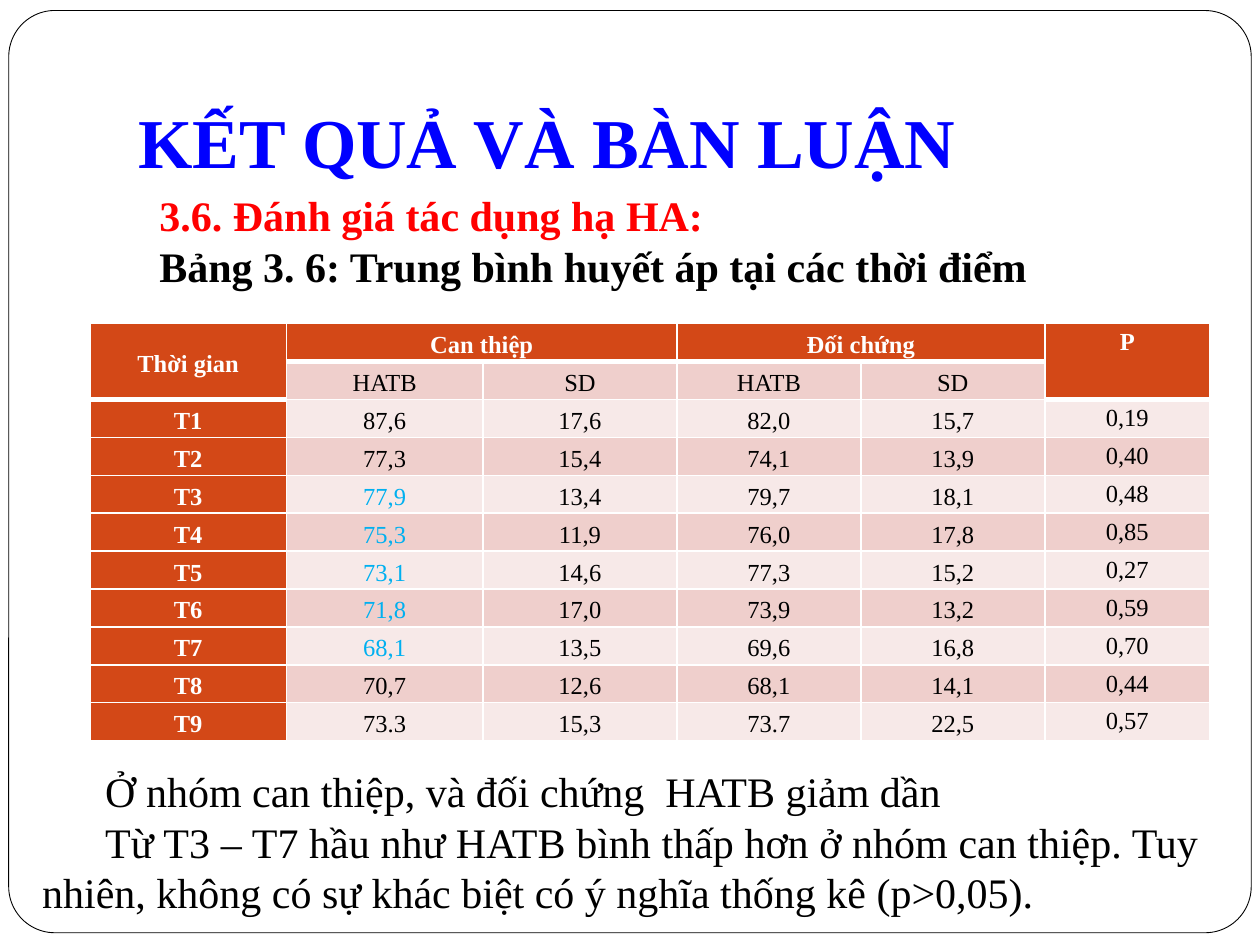
from dataclasses import dataclass

from lxml import etree
from pptx import Presentation
from pptx.dml.color import RGBColor
from pptx.enum.shapes import MSO_SHAPE
from pptx.enum.text import MSO_ANCHOR, MSO_AUTO_SIZE, PP_ALIGN
from pptx.oxml.ns import qn
from pptx.util import Pt

ROUND = MSO_SHAPE.ROUNDED_RECTANGLE
TOP, MIDDLE, BOTTOM = MSO_ANCHOR.TOP, MSO_ANCHOR.MIDDLE, MSO_ANCHOR.BOTTOM
LEFT, CENTER, JUSTIFY = PP_ALIGN.LEFT, PP_ALIGN.CENTER, PP_ALIGN.JUSTIFY
GROW, FIXED = MSO_AUTO_SIZE.SHAPE_TO_FIT_TEXT, MSO_AUTO_SIZE.NONE

FACE = "Times New Roman"
COLORS = {
    "white": "FFFFFF", "black": "000000", "blue": "0000FF", "red": "FF0000",
    "sky": "00B0F0", "head": "D34817", "dark": "EFCFCC", "light": "F7E9E8",
}
WIDTHS = (112.3, 112.3, 110.9, 105.1, 105.1, 94.3)
HEIGHT = 21.67
ENDS = (0, 5)
ROWS = (
    ("Thời gian", "Can thiệp", "", "Đối chứng", "", "P"),
    ("", "HATB", "SD", "HATB", "SD", ""),
    ("T1", "87,6", "17,6", "82,0", "15,7", "0,19"),
    ("T2", "77,3", "15,4", "74,1", "13,9", "0,40"),
    ("T3", "77,9", "13,4", "79,7", "18,1", "0,48"),
    ("T4", "75,3", "11,9", "76,0", "17,8", "0,85"),
    ("T5", "73,1", "14,6", "77,3", "15,2", "0,27"),
    ("T6", "71,8", "17,0", "73,9", "13,2", "0,59"),
    ("T7", "68,1", "13,5", "69,6", "16,8", "0,70"),
    ("T8", "70,7", "12,6", "68,1", "14,1", "0,44"),
    ("T9", "73.3", "15,3", "73.7", "22,5", "0,57"),
)
MERGES = ((0, 0, 1, 0), (0, 1, 0, 2), (0, 3, 0, 4), (0, 5, 1, 5))
LOWER = ("T3", "T4", "T5", "T6", "T7")


@dataclass
class Line:
    text: str
    size: float
    color: str = "black"
    bold: bool = False
    align: PP_ALIGN = JUSTIFY
    margin: float = 0
    indent: float = 0


@dataclass
class Block:
    box: tuple
    inset: tuple
    anchor: MSO_ANCHOR
    fit: MSO_AUTO_SIZE
    lines: tuple


BLOCKS = (
    Block((72, 21.6, 612, 90), (7.2, 3.6, 7.2, 7.2), BOTTOM, FIXED, (
        Line("KẾT QUẢ VÀ BÀN LUẬN", 40, "blue", True, LEFT),)),
    Block((48, 103, 612, 63.4), (7.2, 5, 7.2, 0), MIDDLE, GROW, (
        Line("3.6. Đánh giá tác dụng hạ HA:", 24, "red", True, margin=36),
        Line("Bảng 3. 6: Trung bình huyết áp tại các thời điểm", 24,
             bold=True, indent=36))),
    Block((17, 434, 675, 94.5), (7.2, 3.6, 7.2, 3.6), TOP, GROW, (
        Line("Ở nhóm can thiệp, và đối chứng  HATB giảm dần", 24, indent=36),
        Line("Từ T3 – T7 hầu như HATB bình thấp hơn ở nhóm can thiệp. "
             "Tuy nhiên, không có sự khác biệt có ý nghĩa thống kê (p>0,05).",
             24, indent=36))),
)


def rgb(name: str) -> RGBColor:
    return RGBColor.from_string(COLORS[name])


def write(para, line: Line) -> None:
    para.text = line.text
    para.alignment = line.align
    font = para.font
    font.name, font.size, font.bold = FACE, Pt(line.size), line.bold
    font.color.rgb = rgb(line.color)
    props = para._p.get_or_add_pPr()
    props.set("marL", str(Pt(line.margin)))
    props.set("indent", str(Pt(line.indent)))


def draw_frame(slide) -> None:
    frame = slide.shapes.add_shape(ROUND, Pt(5), Pt(6), Pt(710), Pt(527))
    frame.adjustments[0] = 0.05
    frame.shadow.inherit = False
    frame.fill.solid()
    frame.fill.fore_color.rgb = rgb("white")
    frame.line.color.rgb = rgb("black")
    frame.line.width = Pt(0.5)


def draw_block(slide, block: Block) -> None:
    frame = slide.shapes.add_textbox(*map(Pt, block.box)).text_frame
    frame.word_wrap = True
    frame.auto_size = block.fit
    frame.vertical_anchor = block.anchor
    (frame.margin_left, frame.margin_top,
     frame.margin_right, frame.margin_bottom) = map(Pt, block.inset)
    for pos, line in enumerate(block.lines):
        write(frame.add_paragraph() if pos else frame.paragraphs[0], line)


def set_edges(cell, row: int, col: int) -> None:
    last = 1 if col in ENDS else 0
    sizes = {"L": 1, "R": 1, "T": 3 if row == last + 1 else 1,
             "B": 3 if row <= last else 1}
    props = cell._tc.get_or_add_tcPr()
    for side, size in sizes.items():
        edge = etree.SubElement(props, qn(f"a:ln{side}"), w=str(Pt(size)))
        fill = etree.SubElement(edge, qn("a:solidFill"))
        etree.SubElement(fill, qn("a:srgbClr"), val=COLORS["white"])


def fill_cell(cell, row: int, col: int) -> None:
    head = row == 0 or col == 0 or (row == 1 and col in ENDS)
    lower = col == 1 and ROWS[row][0] in LOWER
    set_edges(cell, row, col)
    cell.fill.solid()
    cell.fill.fore_color.rgb = rgb(
        "head" if head else "dark" if row % 2 else "light")
    cell.vertical_anchor = TOP if col == ENDS[1] else MIDDLE
    cell.margin_left = cell.margin_right = Pt(5)
    cell.margin_top = cell.margin_bottom = Pt(0)
    para = cell.text_frame.paragraphs[0]
    color = "white" if head else "sky" if lower else "black"
    write(para, Line(ROWS[row][col], 14, color, head, CENTER))
    para.line_spacing = 1.2
    para.space_before = Pt(5)


def draw_table(slide) -> None:
    table = slide.shapes.add_table(
        len(ROWS), len(WIDTHS), Pt(51.4), Pt(185),
        Pt(sum(WIDTHS)), Pt(HEIGHT * len(ROWS))).table
    for col, width in zip(table.columns, WIDTHS):
        col.width = Pt(width)
    for row in table.rows:
        row.height = Pt(HEIGHT)
    for row in range(len(ROWS)):
        for col in range(len(WIDTHS)):
            fill_cell(table.cell(row, col), row, col)
    for top, left, end, right in MERGES:
        table.cell(top, left).merge(table.cell(end, right))


def main() -> None:
    deck = Presentation()
    deck.slide_width, deck.slide_height = Pt(720), Pt(540)
    slide = deck.slides.add_slide(deck.slide_layouts[6])
    draw_frame(slide)
    draw_table(slide)
    for block in BLOCKS:
        draw_block(slide, block)
    deck.save("out.pptx")


if __name__ == "__main__":
    main()
